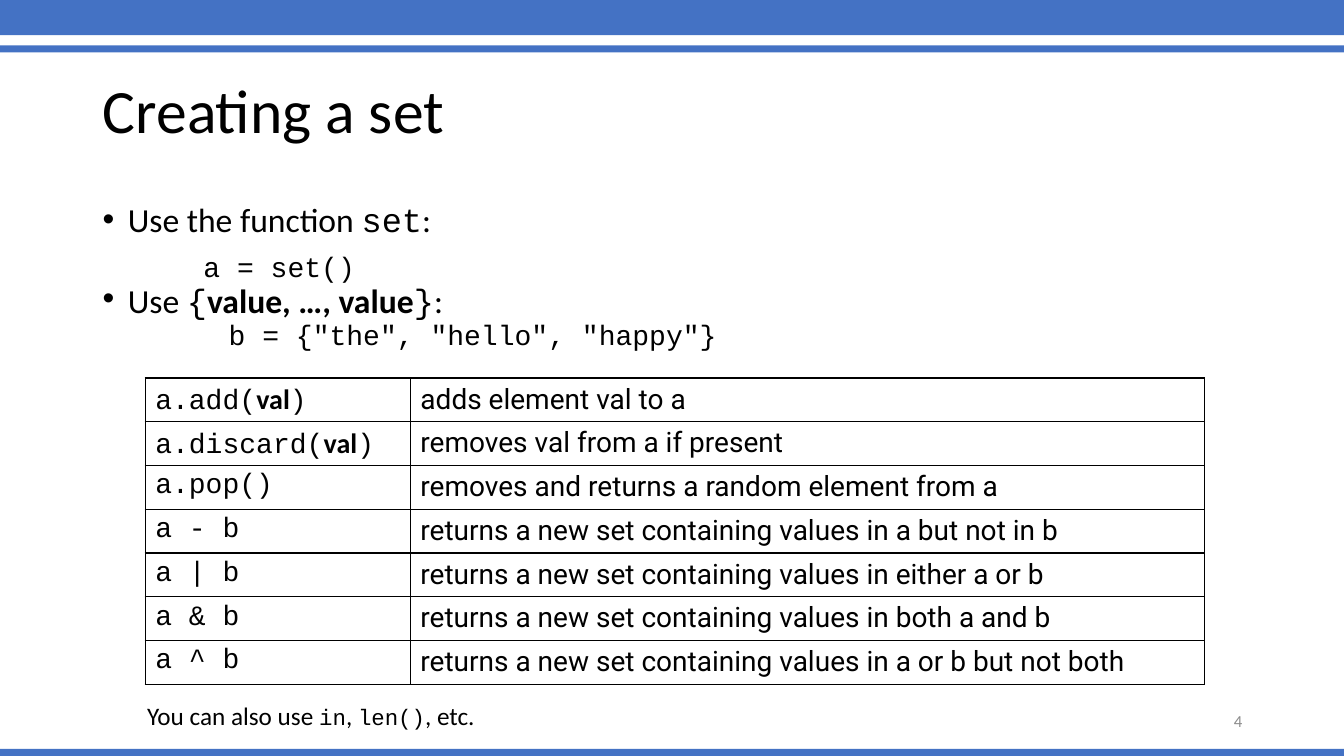
from lxml import etree
from pptx import Presentation
from pptx.dml.color import RGBColor
from pptx.enum.shapes import MSO_SHAPE
from pptx.enum.text import MSO_ANCHOR, PP_ALIGN
from pptx.oxml.ns import qn
from pptx.util import Pt

PX = 9144  # 100 px to the inch
RECT = MSO_SHAPE.RECTANGLE
MIDDLE, TOP = MSO_ANCHOR.MIDDLE, MSO_ANCHOR.TOP
LEFT, RIGHT = PP_ALIGN.LEFT, PP_ALIGN.RIGHT
BLUE = RGBColor(0x44, 0x72, 0xC4)
BLACK = RGBColor(0, 0, 0)
GRAY = RGBColor(0x8C, 0x8C, 0x8C)
SANS, CODE, ROBOTO = "Calibri", "Courier New", "Roboto"

# Content: a run is (text, font, size, bold)
TITLE = [("Creating a set", SANS, 44, False)]
# (runs, line spacing, space before, left margin, bullet)
BODY = [
    ([("Use the function ", SANS, 24, False), ("set", CODE, 24, False),
      (":", SANS, 24, False)], 0.8, 10, 25, True),
    ([("a = set()", CODE, 20, False)], 0.8, 12, 100, False),
    ([("Use ", SANS, 24, False), ("{", CODE, 24, False),
      ("value, …, value", SANS, 24, True), ("}", CODE, 24, False),
      (":", SANS, 24, False)], 0.5, 11, 25, True),
    ([('b = {"the", "hello", "happy"}', CODE, 20, False)], 0.5, 10, 125, False),
]
# (code before the argument, argument, code after it, meaning)
METHODS = [
    ("a.add(", "val", ")", "adds element val to a"),
    ("a.discard(", "val", ")", "removes val from a if present"),
    ("a.pop()", "", "", "removes and returns a random element from a"),
    ("a - b", "", "", "returns a new set containing values in a but not in b"),
    ("a | b", "", "", "returns a new set containing values in either a or b"),
    ("a & b", "", "", "returns a new set containing values in both a and b"),
    ("a ^ b", "", "", "returns a new set containing values in a or b but not both"),
]
FOOTNOTE = [("You can also use ", SANS, 18, False), ("in", CODE, 16, False),
            (", ", SANS, 18, False), ("len()", CODE, 16, False),
            (", etc.", SANS, 18, False)]
NUMBER = [("4", SANS, 12, False)]

# Layout in px
BANDS = [(0, 35), (45, 7), (743, 7)]  # top, height
SLIDE_W, SLIDE_H = 1333, 750
TITLE_BOX = (92, 40, 1150, 145)
BODY_BOX = (92, 200, 1150, 476)
TABLE_LEFT, TABLE_TOP, ROW_H = 144, 375, 43
COLS = (263, 788)
FOOTNOTE_BOX = (136, 690, 349, 40)
NUMBER_BOX = (942, 695, 300, 40)


def emu(*lengths):
    return [n * PX for n in lengths]


def add_runs(p, runs, color=BLACK):
    for text, font, size, bold in runs:
        r = p.add_run()
        r.text = text
        r.font.name, r.font.size, r.font.bold = font, Pt(size), bold
        r.font.color.rgb = color


def add_text(s, box, wrap=True):
    tf = s.shapes.add_textbox(*emu(*box)).text_frame
    tf.word_wrap = wrap
    return tf


def indent(p, margin, bullet):
    pPr = p._p.get_or_add_pPr()
    pPr.set("marL", str(margin * PX))
    pPr.set("indent", str(-25 * PX if bullet else 0))
    if bullet:
        etree.SubElement(pPr, qn("a:buFont")).set("typeface", "Arial")
        etree.SubElement(pPr, qn("a:buChar")).set("char", "•")


def add_borders(cell):
    tcPr = cell._tc.get_or_add_tcPr()
    for i, side in enumerate(("lnL", "lnR", "lnT", "lnB")):
        ln = etree.Element(qn("a:" + side), w=str(Pt(1)))
        fill = etree.SubElement(ln, qn("a:solidFill"))
        etree.SubElement(fill, qn("a:srgbClr")).set("val", str(BLACK))
        tcPr.insert(i, ln)


prs = Presentation()
prs.slide_width, prs.slide_height = emu(SLIDE_W, SLIDE_H)
s = prs.slides.add_slide(prs.slide_layouts[5])

# Blue bands
for top, height in BANDS:
    sp = s.shapes.add_shape(RECT, *emu(0, top, SLIDE_W, height))
    sp.shadow.inherit = False
    sp.fill.solid()
    sp.fill.fore_color.rgb = BLUE
    sp.line.fill.background()

# Title
title = s.shapes.title
title.left, title.top, title.width, title.height = emu(*TITLE_BOX)
title.text_frame.vertical_anchor = MIDDLE
p = title.text_frame.paragraphs[0]
p.alignment, p.line_spacing = LEFT, 0.9
add_runs(p, TITLE)

# Bullets and code lines
tf = add_text(s, BODY_BOX)
for i, (runs, spacing, before, margin, bullet) in enumerate(BODY):
    p = tf.add_paragraph() if i else tf.paragraphs[0]
    p.line_spacing, p.space_before = spacing, Pt(before)
    indent(p, margin, bullet)
    add_runs(p, runs)

# Table of methods and operators
table = s.shapes.add_table(
    len(METHODS), len(COLS),
    *emu(TABLE_LEFT, TABLE_TOP, sum(COLS), ROW_H * len(METHODS))).table
table.first_row = table.horz_banding = False
for column, width in zip(table.columns, COLS):
    column.width = width * PX
for row, (before, argument, after, meaning) in enumerate(METHODS):
    call = [(before, CODE, 20, False)]
    if argument:
        call += [(argument, SANS, 20, True), (after, CODE, 20, False)]
    for col, runs in enumerate((call, [(meaning, ROBOTO, 20, False)])):
        cell = table.cell(row, col)
        cell.vertical_anchor = TOP
        cell.fill.background()
        add_borders(cell)
        add_runs(cell.text_frame.paragraphs[0], runs)

# Footnote and slide number
add_runs(add_text(s, FOOTNOTE_BOX, wrap=False).paragraphs[0], FOOTNOTE)
tf = add_text(s, NUMBER_BOX)
tf.vertical_anchor = MIDDLE
tf.paragraphs[0].alignment = RIGHT
add_runs(tf.paragraphs[0], NUMBER, GRAY)

prs.save("out.pptx")
